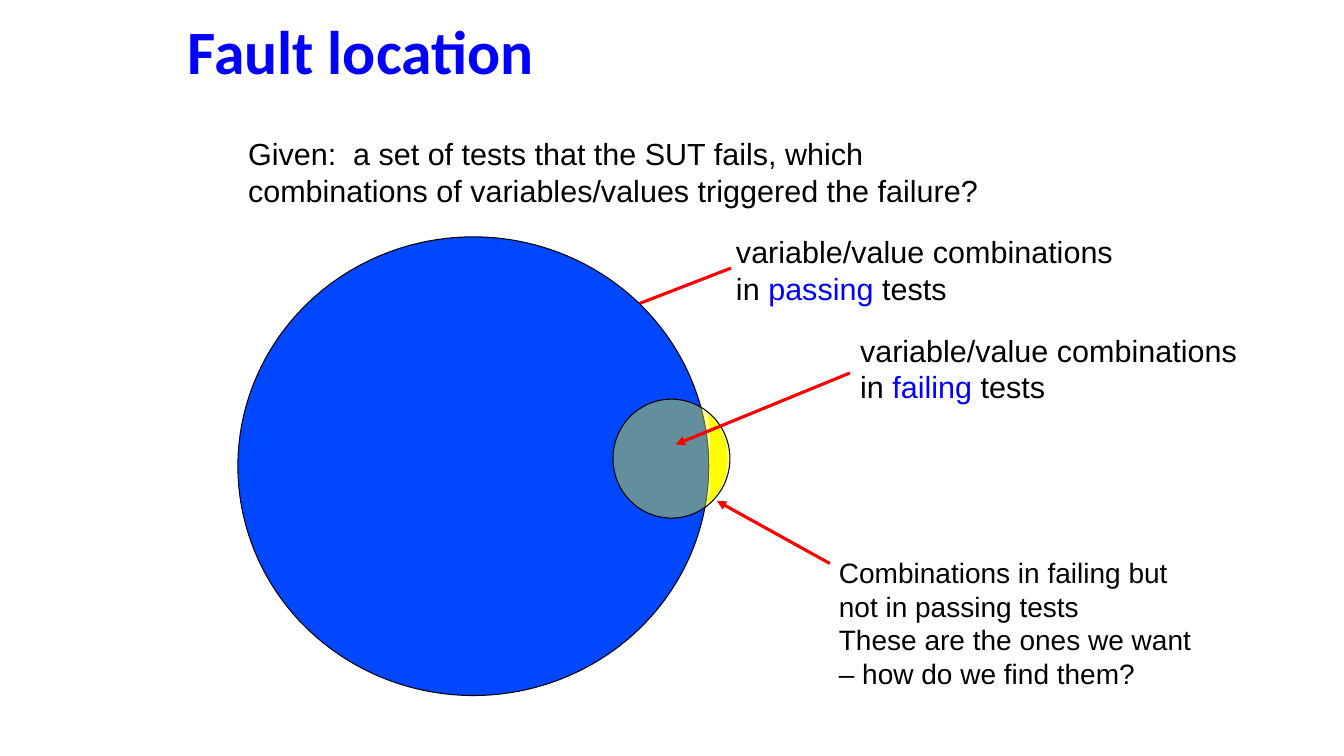
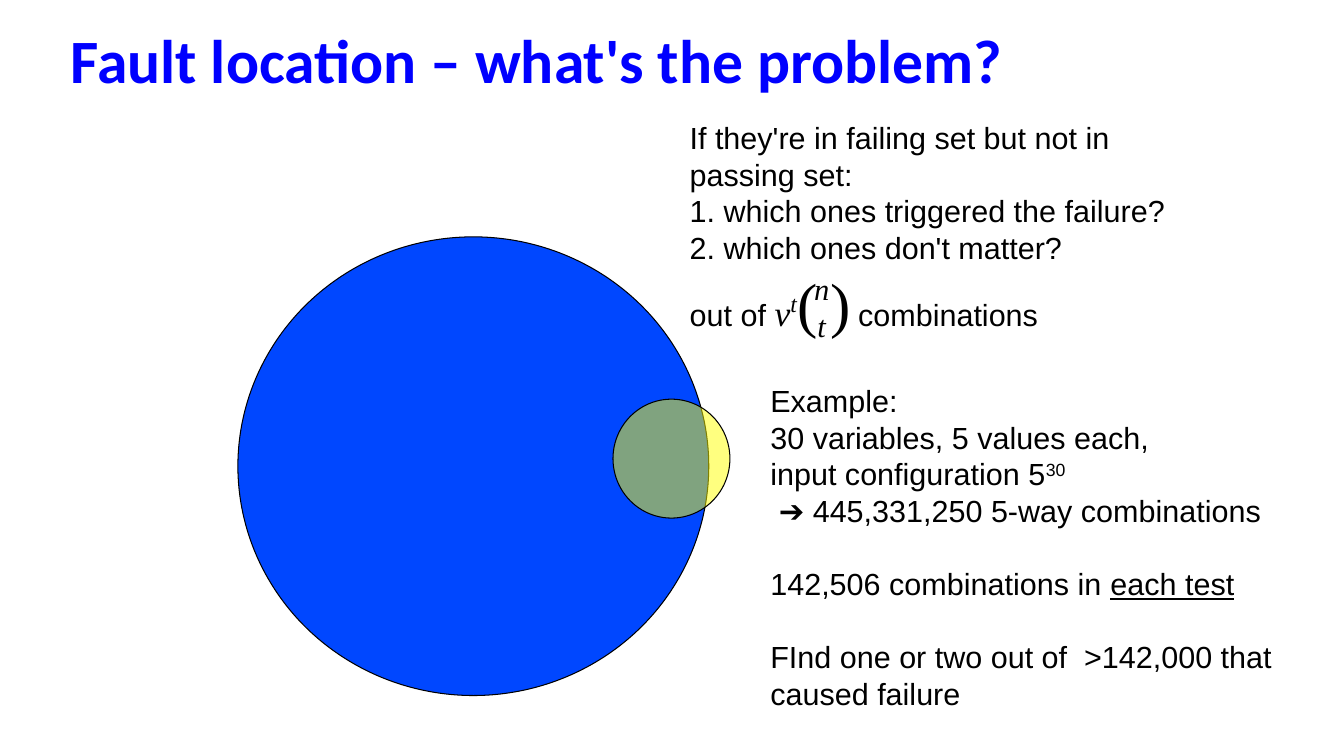
import math
from dataclasses import dataclass

from lxml import etree
from pptx import Presentation
from pptx import util as u
from pptx.dml.color import RGBColor
from pptx.enum import shapes, text
from pptx.oxml.ns import qn


@dataclass(frozen=True)
class Theme:
    blue: str = "0000FF"
    passing: str = "0047FF"
    failing: str = "FFFF00"
    arrow: str = "FF0000"
    ink: str = "000000"
    title_font: str = "Calibri"
    body_font: str = "Arial"
    math_font: str = "Times New Roman"
    title_size: float = 44
    body_size: float = 21.8
    note_size: float = 20
    base_size: float = 25.4
    exponent_size: float = 29
    gap_size: float = 36.3
    bracket_size: float = 43.5
    line_gap: float = 26


THEME = Theme()
PASSING_CIRCLE = (2.36, 2.35, 4.67, 4.55)
FAILING_CIRCLE = (6.08, 3.96, 1.16, 1.18)


def color(value):
    return RGBColor.from_string(value)


def style_run(run, size, font, ink, bold=False, italic=False,
              underline=False, baseline=0):
    run.font.size = u.Pt(size)
    run.font.name = font
    run.font.color.rgb = color(ink)
    run.font.bold = bold
    run.font.italic = italic
    run.font.underline = underline
    if baseline:
        run.font._element.set("baseline", str(baseline * 1000))


def add_text(slide, box, paragraphs, size=THEME.body_size, font=THEME.body_font,
             ink=THEME.ink, align=text.PP_ALIGN.LEFT,
             anchor=text.MSO_ANCHOR.TOP, line_spacing=None, gaps=(), **style):
    """Each paragraph is a string or a list of strings and (string, format) pairs.
    A line of space goes before each paragraph whose index is in gaps."""
    frame = slide.shapes.add_textbox(*map(u.Inches, box)).text_frame
    frame.word_wrap = True
    frame.vertical_anchor = anchor
    frame.margin_left = frame.margin_right = u.Inches(0.09)
    frame.margin_top = frame.margin_bottom = u.Inches(0.04)
    base = dict(size=size, font=font, ink=ink, **style)
    for index, runs in enumerate(paragraphs):
        paragraph = frame.add_paragraph() if index else frame.paragraphs[0]
        paragraph.alignment = align
        paragraph.line_spacing = line_spacing
        if index in gaps:
            paragraph.space_before = u.Pt(THEME.line_gap)
        for item in [runs] if isinstance(runs, str) else runs:
            words, changes = (item, {}) if isinstance(item, str) else item
            run = paragraph.add_run()
            run.text = words
            style_run(run, **{**base, **changes})


def add_title(slide, box, words):
    add_text(slide, box, [words], size=THEME.title_size, font=THEME.title_font,
             ink=THEME.blue, bold=True, anchor=text.MSO_ANCHOR.MIDDLE,
             line_spacing=0.9)


def paint(shape, fill, line, width):
    shape.shadow.inherit = False
    shape.fill.solid()
    shape.fill.fore_color.rgb = color(fill)
    shape.line.color.rgb = color(line)
    shape.line.width = u.Pt(width)


def add_circle(slide, box, fill, opacity=100):
    circle = slide.shapes.add_shape(shapes.MSO_SHAPE.OVAL, *map(u.Inches, box))
    paint(circle, fill, THEME.ink, 0.75)
    if opacity < 100:
        tint = circle._element.spPr.find(qn("a:solidFill"))[0]
        etree.SubElement(tint, qn("a:alpha")).set("val", str(opacity * 1000))


def add_venn(slide, opacity):
    add_circle(slide, PASSING_CIRCLE, THEME.passing)
    add_circle(slide, FAILING_CIRCLE, THEME.failing, opacity)


def add_crescent(slide):
    """Solid highlight on the part of the failing circle outside the passing one."""
    left, top, width, height = FAILING_CIRCLE
    center_x, center_y = left + width / 2, top + height / 2
    arc = [(center_x + 0.55 * math.cos(math.radians(angle)),
            center_y + 0.58 * math.sin(math.radians(angle)))
           for angle in range(-48, 49, 4)]
    points = [(u.Inches(x), u.Inches(y))
              for x, y in arc + [(7.05, 4.86), (7.05, 4.27)]]
    builder = slide.shapes.build_freeform(*points[0])
    builder.add_line_segments(points[1:], close=True)
    paint(builder.convert_to_shape(), THEME.failing, THEME.failing, 1)


def add_arrow(slide, start, end):
    arrow = slide.shapes.add_connector(
        shapes.MSO_CONNECTOR.STRAIGHT, *map(u.Inches, start + end))
    arrow.line.color.rgb = color(THEME.arrow)
    arrow.line.width = u.Pt(2.25)
    etree.SubElement(arrow.line._get_or_add_ln(), qn("a:tailEnd")).set("type", "triangle")
    etree.SubElement(arrow._element.spPr, qn("a:effectLst"))


def add_set_label(slide, box, kind):
    add_text(slide, box, [["variable/value combinations in ",
                           (kind, dict(ink=THEME.blue)), " tests"]])


def build_fault_location(slide):
    add_title(slide, (1.77, 0.11, 8.53, 0.86), "Fault location")
    add_text(slide, (2.37, 1.3, 8.03, 0.82),
             ["Given:  a set of tests that the SUT fails, which "
              "combinations of variables/values triggered the failure?"])

    # Labels and the arrows that run beneath the circles
    add_set_label(slide, (7.21, 2.27, 4.07, 0.82), "passing")
    add_arrow(slide, (7.25, 2.66), (5.57, 3.31))
    add_arrow(slide, (8.23, 5.59), (7.11, 4.97))
    add_text(slide, (8.23, 5.47, 3.86, 1.42),
             ["Combinations in failing but not in passing tests",
              "These are the ones we want – how do we find them?"],
             size=THEME.note_size)
    add_set_label(slide, (8.44, 3.25, 4.07, 0.82), "failing")

    # Circles, with the arrow into the overlap on top
    add_venn(slide, 39)
    add_crescent(slide)
    add_arrow(slide, (8.43, 3.7), (6.7, 4.41))


def build_problem(slide):
    add_title(slide, (0.61, 0.2, 12.12, 0.86),
              "Fault location – what's the problem?")
    add_venn(slide, 50)

    # Questions, ending in the number of combinations
    symbol = dict(font=THEME.math_font)
    bracket = dict(symbol, size=THEME.bracket_size)
    add_text(slide, (6.75, 1.14, 4.92, 2.85), [
        "If they're in failing set but not in passing set:",
        "1. which ones triggered the failure?",
        "2. which ones don't matter?",
        ["out of ",
         ("v", dict(symbol, size=THEME.base_size, italic=True)),
         ("t", dict(symbol, size=THEME.exponent_size, italic=True, baseline=33)),
         ("(", bracket), (" ", dict(symbol, size=THEME.gap_size)),
         (")", bracket), (" ", symbol), "combinations"],
    ])
    add_text(slide, (7.98, 2.64, 0.34, 0.86), ["n", "t"],
             font=THEME.math_font, italic=True, align=text.PP_ALIGN.CENTER)

    # Worked example
    add_text(slide, (7.55, 3.75, 5.52, 3.46), [
        "Example:",
        "30 variables, 5 values each,",
        ["input configuration 5", ("30", dict(baseline=30))],
        " ➔ 445,331,250 5-way combinations",
        ["142,506 combinations in ", ("each test", dict(underline=True))],
        "FInd one or two out of  >142,000 that caused failure",
    ], gaps=(4, 5))


def main():
    presentation = Presentation()
    presentation.slide_width = u.Inches(13.33)
    presentation.slide_height = u.Inches(7.5)
    for build in (build_fault_location, build_problem):
        build(presentation.slides.add_slide(presentation.slide_layouts[6]))
    presentation.save("out.pptx")


if __name__ == "__main__":
    main()
